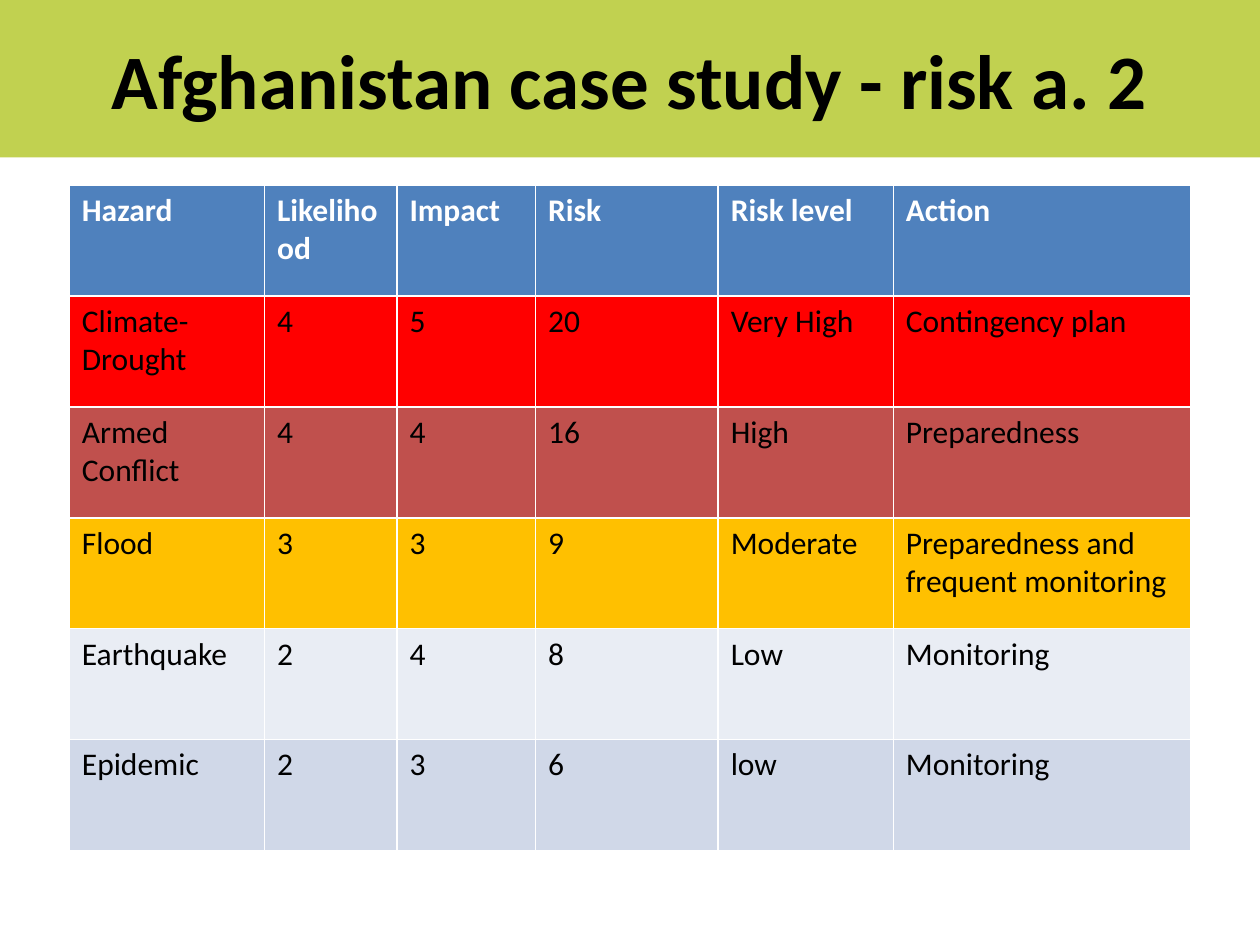
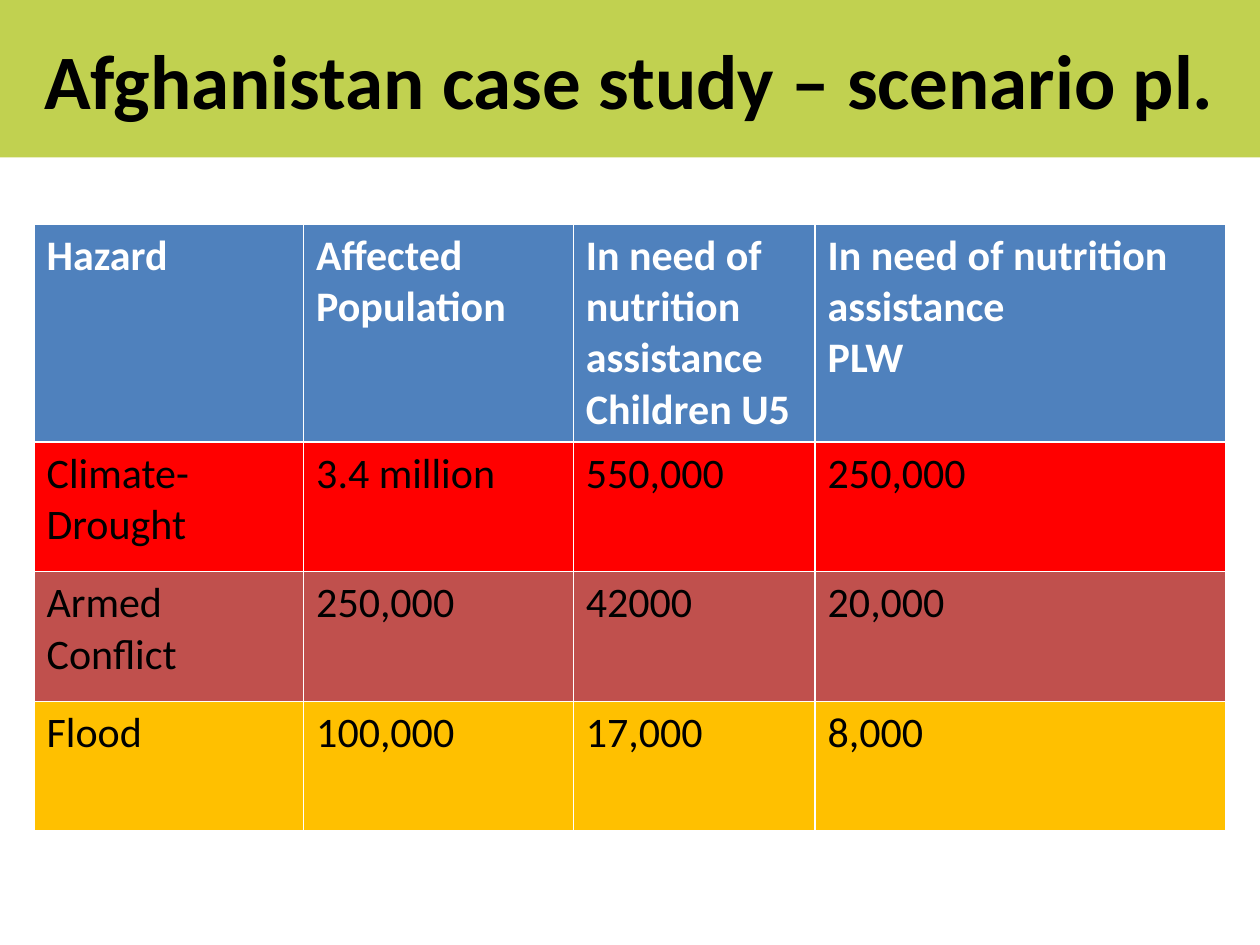
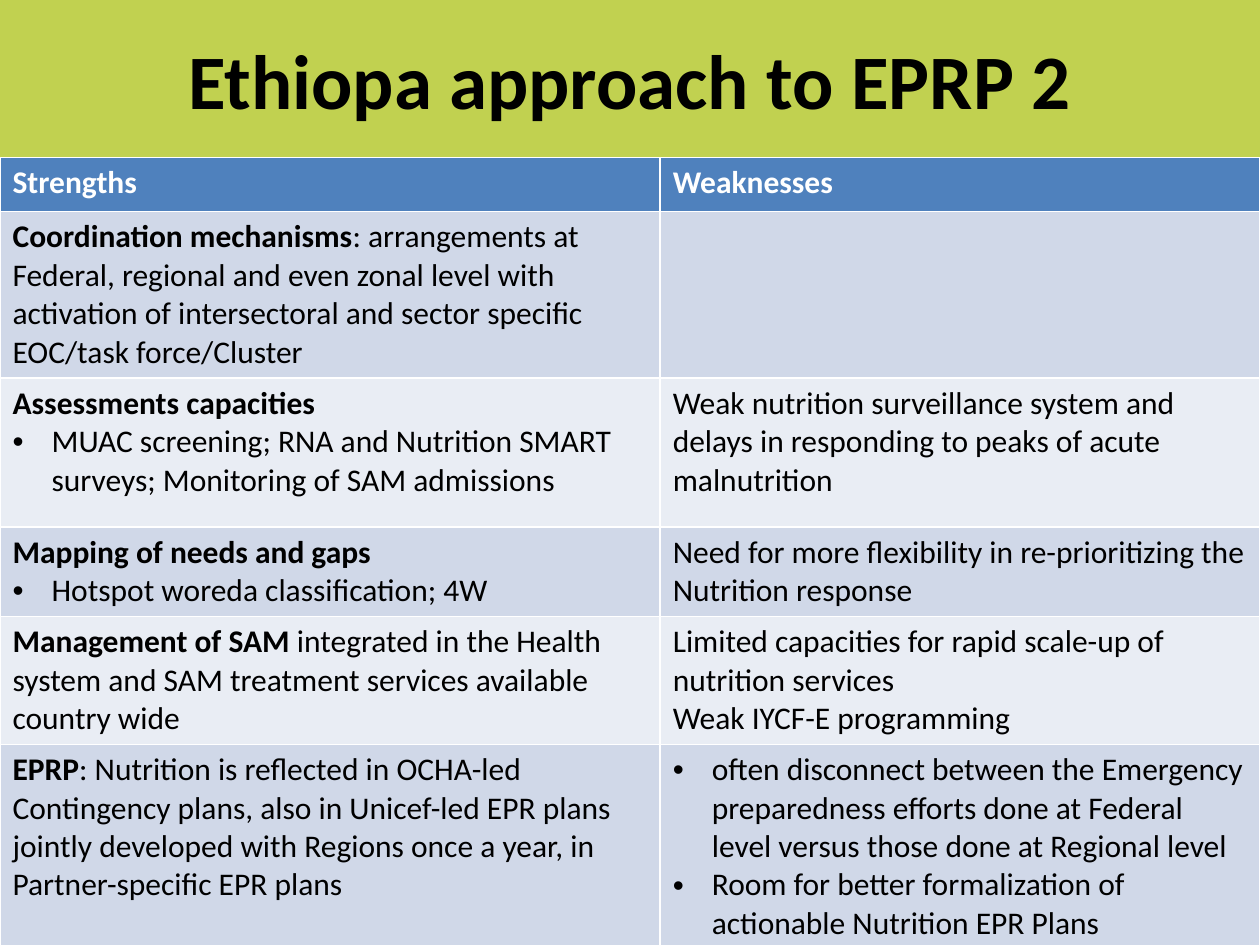
"""Build three slides on emergency preparedness, each with a title band and a table."""
from dataclasses import dataclass

from lxml import etree
from pptx import Presentation
from pptx import util as u
from pptx.dml.color import RGBColor
from pptx.enum import text
from pptx.oxml import ns

COLOURS = {
    "band": "C1D150",
    "header": "4F81BD",
    "very high": "FF0000",
    "high": "C0504D",
    "moderate": "FFC000",
    "light": "E9EDF4",
    "dark": "D0D8E8",
    "black": "000000",
    "white": "FFFFFF",
}


@dataclass
class Entry:
    """One paragraph of a cell, with an optional bold lead or a bullet."""

    body: str = ""
    lead: str = ""
    bullet: bool = False


class Deck:
    """Holds the shared style and the current slide."""

    font_name = "Calibri"
    title_height = 1.25
    bullet_indent = u.Inches(0.31)

    def __init__(self):
        self.presentation = Presentation()
        self.presentation.slide_width = u.Inches(10)
        self.presentation.slide_height = u.Inches(7.5)
        self.slide = None

    def colour(self, name):
        """Return the named colour."""
        return RGBColor.from_string(COLOURS[name])

    def fill(self, target, name):
        """Fill a shape or a cell with the named colour."""
        target.fill.solid()
        target.fill.fore_color.rgb = self.colour(name)

    def style(self, paragraph, size, colour, bold):
        """Set the font of a whole paragraph."""
        font = paragraph.font
        font.name = self.font_name
        font.size = u.Pt(size)
        font.bold = bold
        font.color.rgb = self.colour(colour)

    def add_slide(self, title):
        """Start a slide with its title band."""
        layout = self.presentation.slide_layouts[5]
        self.slide = self.presentation.slides.add_slide(layout)
        shape = self.slide.shapes.title
        shape.left, shape.top = u.Inches(0), u.Inches(0)
        shape.width = self.presentation.slide_width
        shape.height = u.Inches(self.title_height)
        self.fill(shape, "band")
        frame = shape.text_frame
        frame.text = title
        frame.auto_size = text.MSO_AUTO_SIZE.NONE
        frame.vertical_anchor = text.MSO_ANCHOR.MIDDLE
        paragraph = frame.paragraphs[0]
        paragraph.alignment = text.PP_ALIGN.CENTER
        self.style(paragraph, 44, "black", True)

    def add_bullet(self, paragraph):
        """Give a paragraph a bullet and a hanging indent."""
        properties = paragraph._p.get_or_add_pPr()
        properties.set("marL", str(self.bullet_indent))
        properties.set("indent", str(-self.bullet_indent))
        etree.SubElement(properties, ns.qn("a:buFont"), typeface="Arial")
        etree.SubElement(properties, ns.qn("a:buChar"), char="•")

    def fill_cell(self, cell, content, fill, size, is_header):
        """Write a string or a list of entries into a cell."""
        self.fill(cell, fill)
        entries = [Entry(content)] if isinstance(content, str) else content
        frame = cell.text_frame
        for index, entry in enumerate(entries):
            paragraph = frame.add_paragraph() if index else frame.paragraphs[0]
            if entry.bullet:
                self.add_bullet(paragraph)
            self.style(paragraph, size, "white" if is_header else "black", is_header)
            if entry.lead:
                run = paragraph.add_run()
                run.text = entry.lead
                run.font.bold = True
            if entry.body:
                paragraph.add_run().text = entry.body

    def add_table(self, left, top, widths, heights, rows, size=18):
        """Add a table whose rows are pairs of a fill name and cell contents."""
        table = self.slide.shapes.add_table(
            len(rows), len(widths), u.Inches(left), u.Inches(top),
            u.Inches(sum(widths)), u.Inches(sum(heights))).table
        table.horz_banding = False
        for column, width in zip(table.columns, widths):
            column.width = u.Inches(width)
        for index, (row, height, (fill, contents)) in enumerate(
                zip(table.rows, heights, rows)):
            row.height = u.Inches(height)
            for cell, content in zip(row.cells, contents):
                self.fill_cell(cell, content, fill, size, index == 0)


def add_risk_slide(deck):
    """Rank the hazards by likelihood and impact."""
    deck.add_slide("Afghanistan case study - risk a. 2")
    rows = [
        ("header", ["Hazard", "Likelihood", "Impact", "Risk", "Risk level", "Action"]),
        ("very high", ["Climate-Drought", "4", "5", "20", "Very High", "Contingency plan"]),
        ("high", ["Armed Conflict", "4", "4", "16", "High", "Preparedness"]),
        ("moderate", ["Flood", "3", "3", "9", "Moderate",
                      "Preparedness and frequent monitoring"]),
        ("light", ["Earthquake", "2", "4", "8", "Low", "Monitoring"]),
        ("dark", ["Epidemic", "2", "3", "6", "low", "Monitoring"]),
    ]
    widths = [1.55, 1.05, 1.1, 1.45, 1.39, 2.36]
    deck.add_table(0.55, 1.47, widths, [0.88] * len(rows), rows)


def add_scenario_slide(deck):
    """Show the population affected by each main hazard."""
    deck.add_slide("Afghanistan case study – scenario pl.")
    need = Entry("In need of nutrition assistance")
    rows = [
        ("header", ["Hazard", "Affected Population",
                    [need, Entry("Children U5")], [need, Entry("PLW")]]),
        ("very high", ["Climate-Drought", "3.4 million", "550,000", "250,000"]),
        ("high", ["Armed Conflict", "250,000", "42000", "20,000"]),
        ("moderate", ["Flood", "100,000", "17,000", "8,000"]),
    ]
    widths = [2.14, 2.14, 1.92, 3.26]
    deck.add_table(0.27, 1.78, widths, [1.48] + [1.03] * 3, rows, size=24)


def add_approach_slide(deck):
    """Set strengths against weaknesses."""
    deck.add_slide("Ethiopa approach to EPRP 2")
    rows = [
        ("header", ["Strengths", "Weaknesses"]),
        ("dark", [
            [Entry(": arrangements at Federal, regional and even zonal level with "
                   "activation of intersectoral and sector specific "
                   "EOC/task force/Cluster", lead="Coordination mechanisms")],
            ""]),
        ("light", [
            [Entry(lead="Assessments capacities"),
             Entry("MUAC screening; RNA and Nutrition SMART surveys; "
                   "Monitoring of SAM admissions", bullet=True)],
            "Weak nutrition surveillance system and delays in responding to "
            "peaks of acute malnutrition"]),
        ("dark", [
            [Entry(lead="Mapping of needs and gaps"),
             Entry("Hotspot woreda classification; 4W", bullet=True)],
            "Need for more flexibility in re-prioritizing the Nutrition response"]),
        ("light", [
            [Entry("integrated in the Health system and SAM treatment services "
                   "available country wide", lead="Management of SAM ")],
            [Entry("Limited capacities for rapid scale-up of nutrition services"),
             Entry("Weak IYCF-E programming")]]),
        ("dark", [
            [Entry(": Nutrition is reflected in OCHA-led Contingency plans, also in "
                   "Unicef-led EPR plans jointly developed with Regions once a year, "
                   "in Partner-specific EPR plans", lead="EPRP")],
            [Entry("often disconnect between the Emergency preparedness efforts done "
                   "at Federal level versus those done at Regional level", bullet=True),
             Entry("Room for better formalization of actionable Nutrition EPR Plans",
                   bullet=True)]]),
    ]
    heights = [0.43, 1.18, 1.18, 0.64, 0.91, 1.73]
    deck.add_table(0, deck.title_height, [5.24, 4.76], heights, rows)


def main():
    """Build and save the slides."""
    deck = Deck()
    add_risk_slide(deck)
    add_scenario_slide(deck)
    add_approach_slide(deck)
    deck.presentation.save("out.pptx")


if __name__ == "__main__":
    main()
